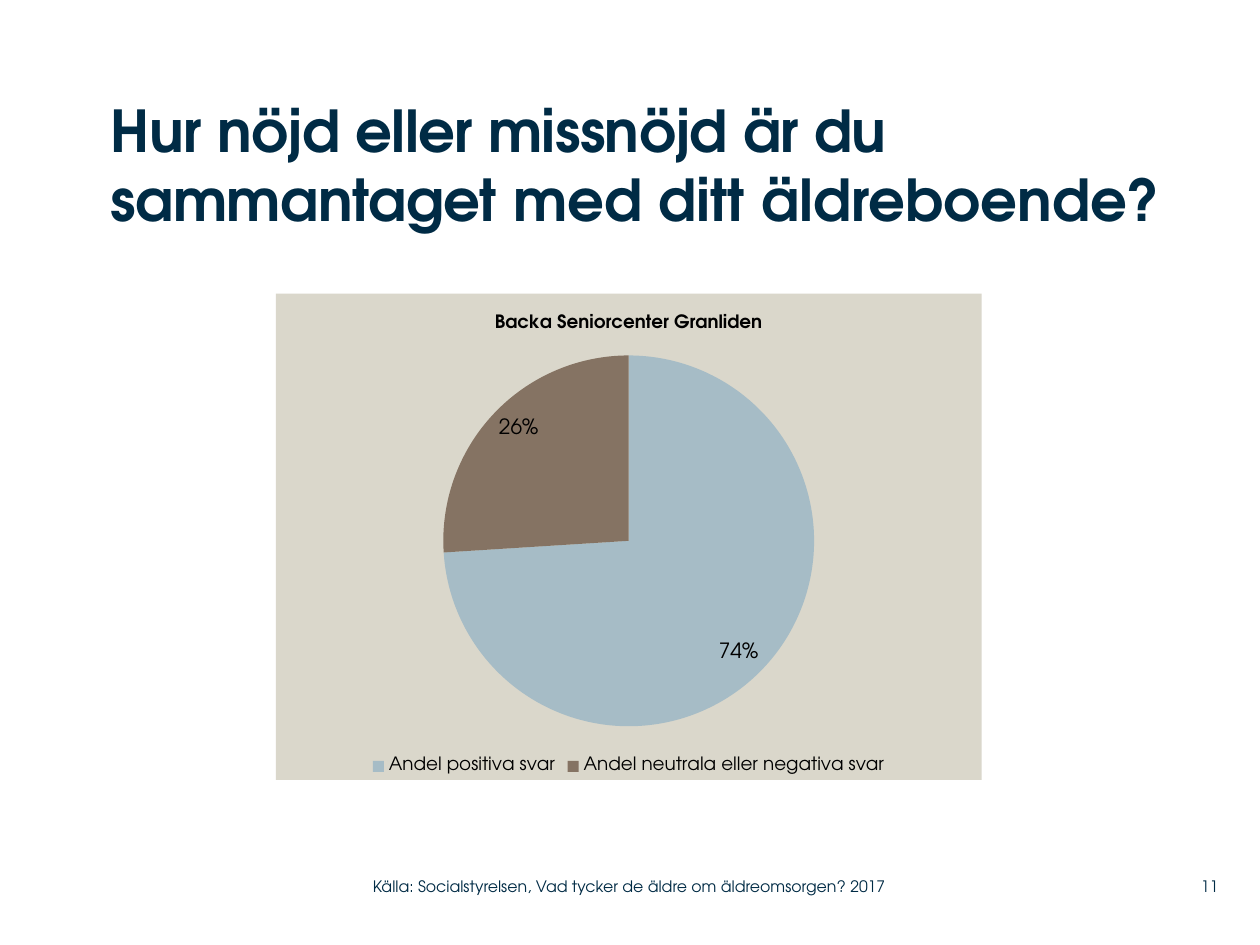
from lxml import etree
from pptx import Presentation
from pptx.chart.data import CategoryChartData
from pptx.dml.color import RGBColor
from pptx.enum.chart import XL_CHART_TYPE, XL_LABEL_POSITION, XL_LEGEND_POSITION
from pptx.enum.text import MSO_ANCHOR, PP_ALIGN
from pptx.oxml import parse_xml
from pptx.util import Inches, Pt

PIE = XL_CHART_TYPE.PIE
IN_END = XL_LABEL_POSITION.INSIDE_END
BELOW = XL_LEGEND_POSITION.BOTTOM
TOP, MIDDLE = MSO_ANCHOR.TOP, MSO_ANCHOR.MIDDLE
LEFT, RIGHT = PP_ALIGN.LEFT, PP_ALIGN.RIGHT

NAVY = RGBColor(0x00, 0x2B, 0x45)
BLACK = RGBColor(0x00, 0x00, 0x00)
SAND = RGBColor(0xDA, 0xD7, 0xCB)
BLUE = RGBColor(0xA6, 0xBC, 0xC6)
BROWN = RGBColor(0x85, 0x73, 0x63)
FACE = "TeX Gyre Adventor"
DRAW = "http://schemas.openxmlformats.org/drawingml/2006/main"
CHART = "http://schemas.openxmlformats.org/drawingml/2006/chart"


def style(font, size, color, bold=False):
    look = {"name": FACE, "size": Pt(size), "bold": bold}
    for key, value in look.items():
        setattr(font, key, value)
    font.color.rgb = color


deck = Presentation()
deck.slide_width, deck.slide_height = Inches(10), Inches(7.5)
slide = deck.slides.add_slide(deck.slide_layouts[6])

# Heading, source and page number: place, size, bold, anchor, alignment, runs
foot, high = 6.89, 0.29
texts = [
    ((0.88, 0.75, 8.83, 1.42), 33, True, TOP, LEFT,
     [("Hur nöjd eller missnöjd är du sammantaget ", -30),
      ("med ditt äldreboende?", 0)]),
    ((2.96, foot, 4.43, high), 9, False, MIDDLE, LEFT,
     [("Källa: Socialstyrelsen, Vad tycker de äldre om äldreomsorgen? 2017", 0)]),
    ((9.2, foot, 0.47, high), 9, False, MIDDLE, RIGHT, [("11", 0)]),
]
for place, size, bold, anchor, align, runs in texts:
    frame = slide.shapes.add_textbox(*map(Inches, place)).text_frame
    layout = {"word_wrap": True, "vertical_anchor": anchor, "margin_left": 0,
              "margin_right": 0, "margin_top": 0, "margin_bottom": 0}
    for key, value in layout.items():
        setattr(frame, key, value)
    para = frame.paragraphs[0]
    para.alignment = align
    for words, space in runs:
        run = para.add_run()
        run.text = words
        style(run.font, size, NAVY, bold)
        if space:
            run.font._element.set("spc", str(space))

# Share of answers
data = CategoryChartData(number_format="0")
data.categories = ["Andel positiva svar", "Andel neutrala eller negativa svar"]
data.add_series("Series 1", (74, 26))
place = map(Inches, (2.19, 2.33, 5.6, 3.86))
chart = slide.shapes.add_chart(PIE, *place, data).chart
style(chart.font, 18, BLACK)

chart.has_title = True
chart.chart_title.include_in_layout = False
head = chart.chart_title.text_frame
head.text = "Backa Seniorcenter Granliden"
style(head.paragraphs[0].runs[0].font, 10.5, BLACK, True)

chart.has_legend = True
chart.legend.position = BELOW
chart.legend.include_in_layout = False
style(chart.legend.font, 10.5, BLACK)

plot = chart.plots[0]
plot.vary_by_categories = True
for index, color in enumerate((BLUE, BROWN)):
    fill = plot.series[0].points[index].format.fill
    fill.solid()
    fill.fore_color.rgb = color

plot.has_data_labels = True
labels = plot.data_labels
flags = {"show_percentage": True, "show_value": False, "number_format": "0%",
         "number_format_is_linked": False, "position": IN_END}
for key, value in flags.items():
    setattr(labels, key, value)
style(labels.font, 12, BLACK)

# Chart backdrop, placed right after the chart element
backdrop = parse_xml(
    f'<c:spPr xmlns:c="{CHART}" xmlns:a="{DRAW}"><a:solidFill>'
    f'<a:srgbClr val="{SAND}"/></a:solidFill></c:spPr>')
line = etree.SubElement(backdrop, f"{{{DRAW}}}ln")
etree.SubElement(line, f"{{{DRAW}}}noFill")
chart._chartSpace.chart.addnext(backdrop)

deck.save("out.pptx")
